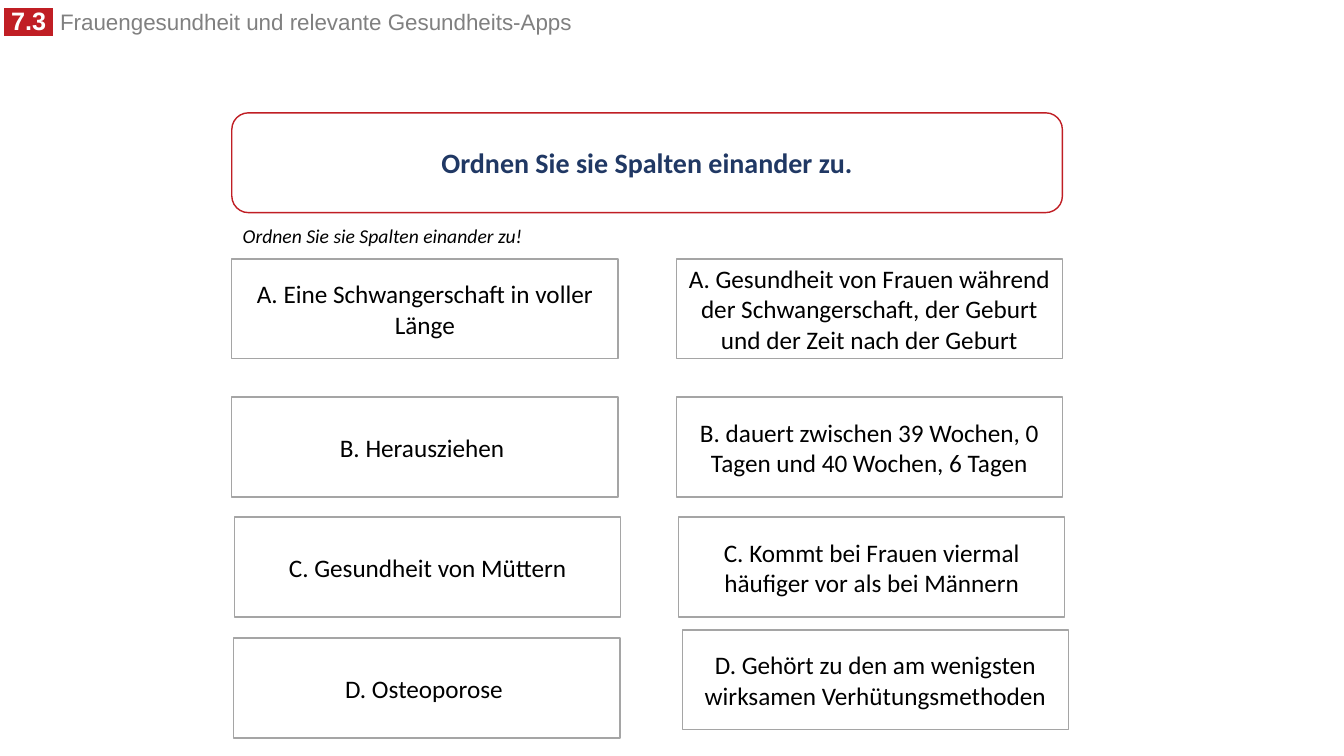
"""Build the matching exercise slide on women's health."""
from dataclasses import dataclass

from lxml import etree
from pptx import Presentation
from pptx.dml.color import RGBColor
from pptx.enum import shapes, text
from pptx.oxml.ns import qn
from pptx.util import Pt

CHAPTER = " 7.3 "
TOPIC = "Frauengesundheit und relevante Gesundheits-Apps"
TASK = "Ordnen Sie sie Spalten einander zu."
HINT = "Ordnen Sie sie Spalten einander zu!"
TERMS = [
    ("A. Eine Schwangerschaft in voller Länge", 165.6, 185),
    ("B. Herausziehen ", 165.6, 283.7),
    ("C. Gesundheit von Müttern", 167.6, 369.4),
    ("D. Osteoporose ", 167, 455.8),
]
MEANINGS = [
    ("A. Gesundheit von Frauen während der Schwangerschaft, der Geburt "
     "und der Zeit nach der Geburt", 483.1, 185),
    ("B. dauert zwischen 39 Wochen, 0 Tagen und 40 Wochen, 6 Tagen", 483.1, 283.7),
    ("C. Kommt bei Frauen viermal häufiger vor als bei Männern", 484.8, 369.4),
    ("D. Gehört zu den am wenigsten wirksamen Verhütungsmethoden", 487.4, 450),
]
CARD_WIDTH, CARD_HEIGHT = 275.8, 71.3


@dataclass(frozen=True)
class Theme:
    """Colours, fonts and type sizes of the slide."""
    red: str = "C01E24"
    navy: str = "203864"
    grey: str = "808080"
    border: str = "A5A5A5"
    white: str = "FFFFFF"
    black: str = "000000"
    head_font: str = "Arial"
    body_font: str = "Calibri"
    chapter: int = 18
    topic: int = 16
    task: int = 20
    card: int = 18
    hint: int = 14


THEME = Theme()


def add_span(para, words, size, color, font=THEME.body_font, bold=False, italic=False):
    """Add one formatted run to a paragraph."""
    span = para.add_run()
    span.text = words
    span.font.size = Pt(size)
    span.font.name = font
    span.font.bold = bold
    span.font.italic = italic
    span.font.color.rgb = RGBColor.from_string(color)
    return span


def highlight(span, color):
    """Put a coloured band behind a run."""
    band = etree.Element(qn("a:highlight"))
    etree.SubElement(band, qn("a:srgbClr"), val=color)
    span.font._element.find(qn("a:solidFill")).addnext(band)


def add_header(page):
    """Fill the title placeholder with chapter number and topic."""
    title = page.shapes.title
    title.left, title.top, title.width, title.height = map(Pt, (-4.3, 4.3, 493.9, 25.2))
    frame = title.text_frame
    frame.word_wrap = True
    frame.auto_size = text.MSO_AUTO_SIZE.SHAPE_TO_FIT_TEXT
    frame.vertical_anchor = text.MSO_ANCHOR.TOP
    para = frame.paragraphs[0]
    para.alignment = text.PP_ALIGN.LEFT
    para.line_spacing = 0.8
    number = add_span(para, CHAPTER, THEME.chapter, THEME.white, THEME.head_font, bold=True)
    highlight(number, THEME.red)
    add_span(para, " ", THEME.chapter, THEME.grey, THEME.head_font)
    add_span(para, TOPIC, THEME.topic, THEME.grey, THEME.head_font)


def add_card(page, kind, place, border, words, size, color, bold=False):
    """Draw a white outlined box with centred text."""
    card = page.shapes.add_shape(kind, *map(Pt, place))
    card.shadow.inherit = False
    card.fill.solid()
    card.fill.fore_color.rgb = RGBColor.from_string(THEME.white)
    card.line.color.rgb = RGBColor.from_string(border)
    card.line.width = Pt(1)
    frame = card.text_frame
    frame.word_wrap = True
    frame.vertical_anchor = text.MSO_ANCHOR.MIDDLE
    para = frame.paragraphs[0]
    para.alignment = text.PP_ALIGN.CENTER
    add_span(para, words, size, color, bold=bold)


def add_hint(page):
    """Write the short instruction above the columns."""
    box = page.shapes.add_textbox(*map(Pt, (166.3, 156.2, 216, 24.5)))
    box.text_frame.word_wrap = False
    box.text_frame.auto_size = text.MSO_AUTO_SIZE.SHAPE_TO_FIT_TEXT
    add_span(box.text_frame.paragraphs[0], HINT, THEME.hint, THEME.black, italic=True)


def main():
    """Assemble and save the deck."""
    deck = Presentation()
    deck.slide_width, deck.slide_height = Pt(960), Pt(540)
    page = deck.slides.add_slide(deck.slide_layouts.get_by_name("Title Only"))
    add_header(page)
    add_card(page, shapes.MSO_SHAPE.ROUNDED_RECTANGLE, (165.6, 80.6, 593.3, CARD_HEIGHT),
             THEME.red, TASK, THEME.task, THEME.navy, bold=True)
    add_hint(page)
    for pair in zip(TERMS, MEANINGS):
        for words, left, top in pair:
            add_card(page, shapes.MSO_SHAPE.RECTANGLE, (left, top, CARD_WIDTH, CARD_HEIGHT),
                     THEME.border, words, THEME.card, THEME.black)
    deck.save("out.pptx")


if __name__ == "__main__":
    main()
